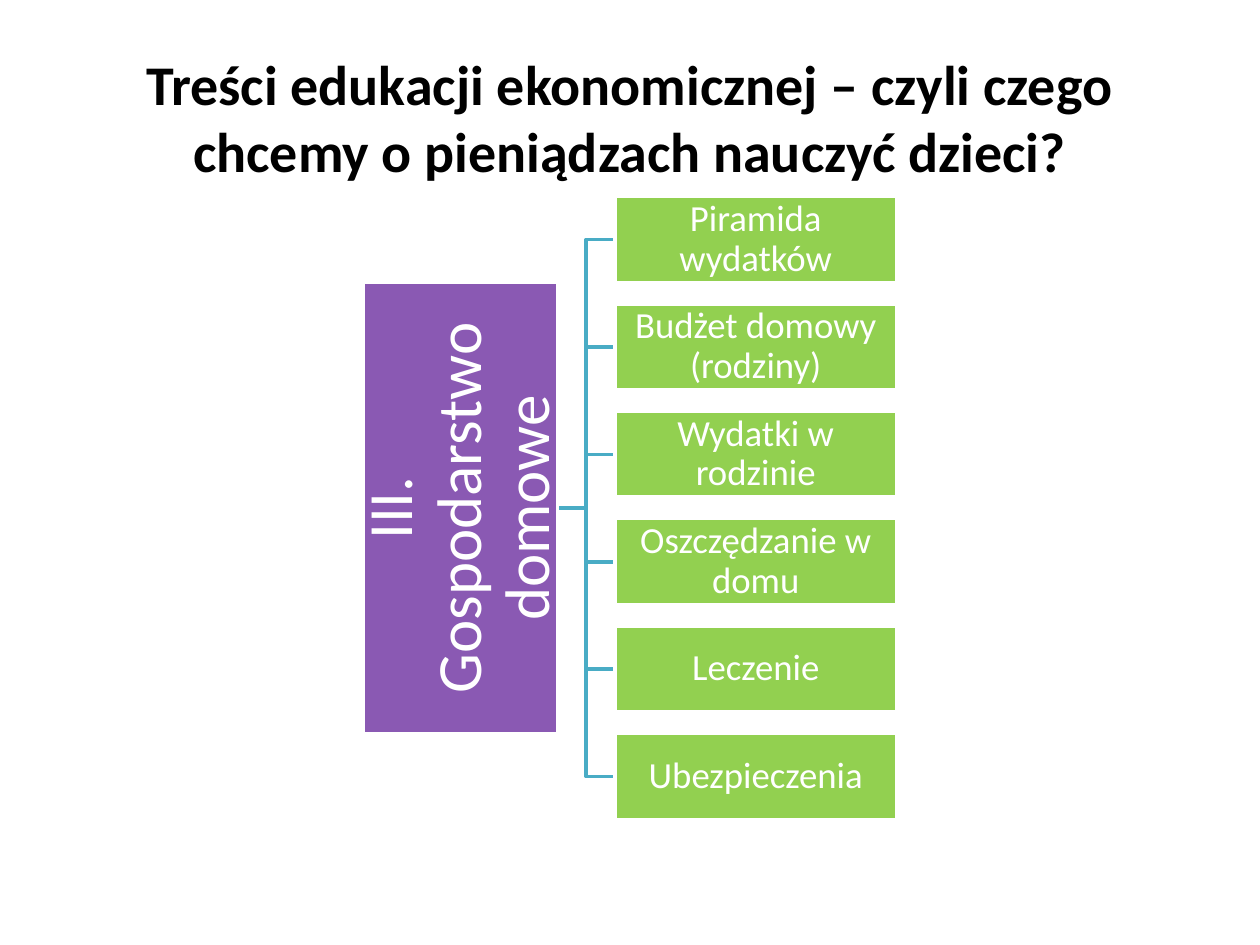
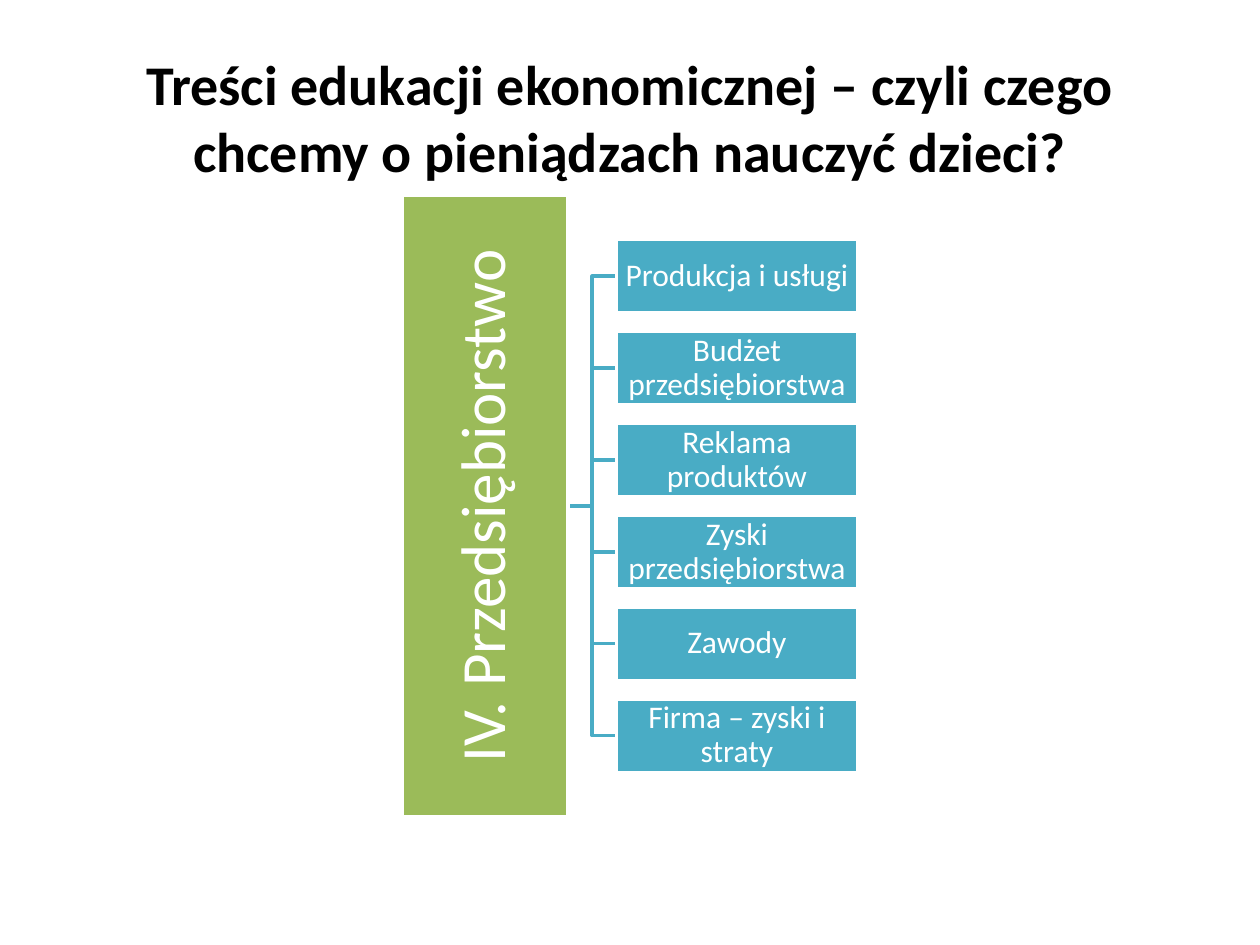
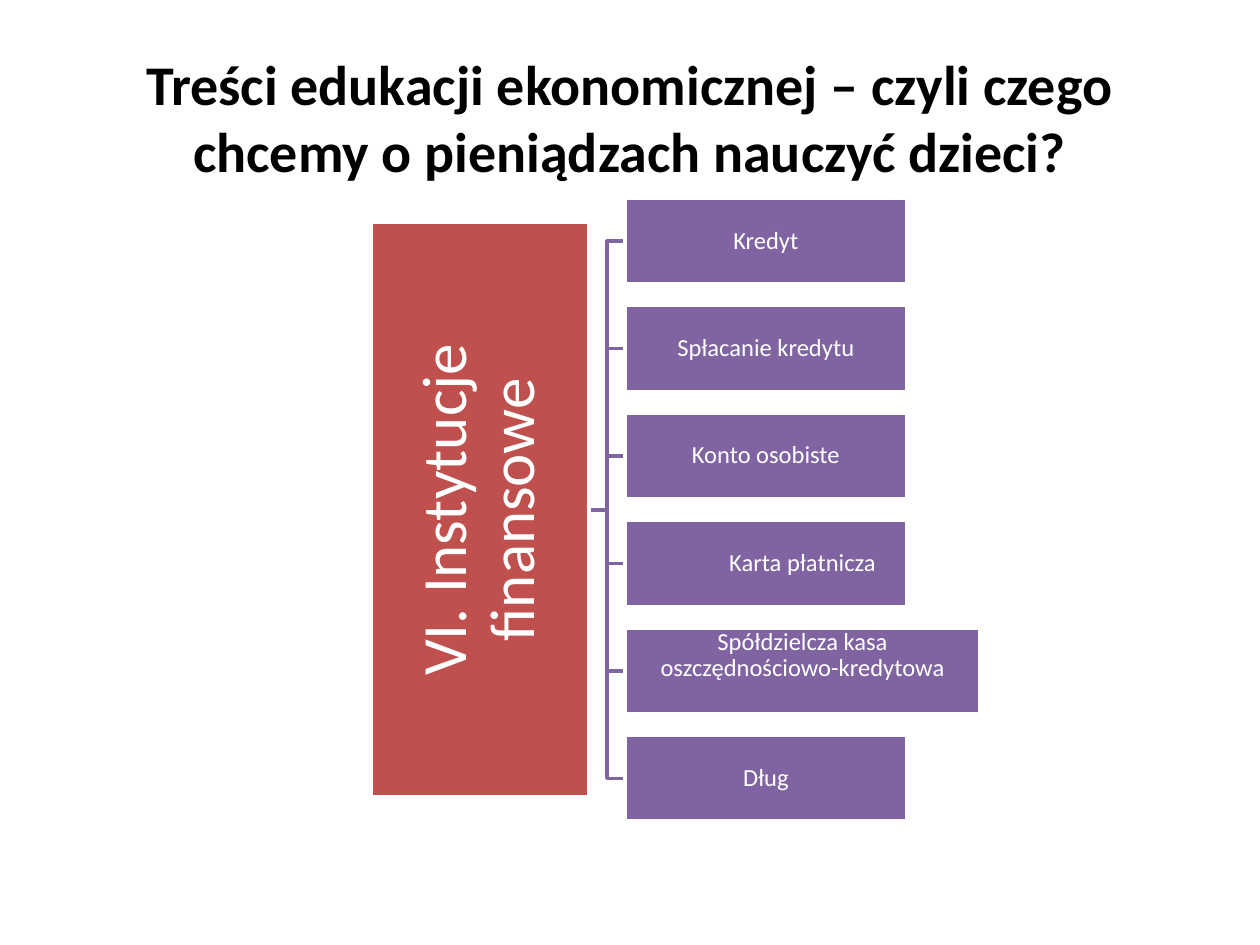
import dataclasses
import pptx
import pptx.dml.color
import pptx.enum.shapes
import pptx.enum.text
import pptx.util

Pt = pptx.util.Pt
RGB = pptx.dml.color.RGBColor.from_string
PP_ALIGN = pptx.enum.text.PP_ALIGN
ANCHOR = pptx.enum.text.MSO_ANCHOR


@dataclasses.dataclass(frozen=True)
class Theme:
    font: str = "Calibri"
    black: str = "000000"
    white: str = "FFFFFF"
    purple: str = "8A59B3"
    lime: str = "92D050"
    olive: str = "9BBB59"
    teal: str = "49ACC5"
    red: str = "BF504D"
    violet: str = "8064A2"
    title_size: int = 32
    root_size: int = 36
    large: int = 21
    medium: int = 18
    small: int = 14
    line: int = 2


@dataclasses.dataclass(frozen=True)
class Item:
    text: str
    box_w: float = None
    text_w: float = None
    text_h: float = None


@dataclasses.dataclass(frozen=True)
class Topic:
    root: Item
    root_color: str
    root_x: float
    root_w: float
    root_h: float
    items: tuple
    item_color: str
    line_color: str
    item_size: int
    item_x: float
    item_w: float
    item_h: float
    mid_y: float


THEME = Theme()
TITLE = "Treści edukacji ekonomicznej – czyli czego chcemy o pieniądzach nauczyć dzieci?"
WIDE = 203
TOPICS = (
    Topic(
        Item("III. Gospodarstwo domowe"), THEME.purple, 207.8, 110.8, 258.5,
        (Item("Piramida wydatków"), Item("Budżet domowy (rodziny)"),
         Item("Wydatki w rodzinie"), Item("Oszczędzanie w domu"),
         Item("Leczenie"), Item("Ubezpieczenia")),
        THEME.lime, THEME.teal, THEME.large, 351.3, 161.1, 49.1, 290.3),
    Topic(
        Item("IV. Przedsiębiorstwo"), THEME.olive, 229.7, 95, 355.5,
        (Item("Produkcja i usługi"), Item("Budżet przedsiębiorstwa"),
         Item("Reklama produktów"), Item("Zyski przedsiębiorstwa"),
         Item("Zawody"), Item("Firma – zyski i straty")),
        THEME.teal, THEME.teal, THEME.medium, 352.2, 137.8, 42, 289.1),
    Topic(
        Item("VI. Instytucje finansowe"), THEME.red, 212, 124.5, 328.3,
        (Item("Kredyt"), Item("Spłacanie kredytu"), Item("Konto osobiste"),
         Item("Karta płatnicza", text_w=WIDE),
         Item("Spółdzielcza kasa oszczędnościowo-kredytowa",
              box_w=WIDE, text_w=WIDE, text_h=31.7),
         Item("Dług")),
        THEME.violet, THEME.violet, THEME.small, 357.1, 161.1, 49.1, 291.3),
)


class Deck:
    def __init__(self, theme):
        self.theme = theme
        self.prs = pptx.Presentation()
        self.prs.slide_width, self.prs.slide_height = Pt(720), Pt(540)
        self.s = None

    def add_slide(self):
        self.s = self.prs.slides.add_slide(self.prs.slide_layouts[6])

    def set_text(self, sp, text, size, color, inset_x, inset_y, bold=False, spacing=1.0):
        tf = sp.text_frame
        frame = dict(word_wrap=True, vertical_anchor=ANCHOR.MIDDLE,
                     margin_left=Pt(inset_x), margin_right=Pt(inset_x),
                     margin_top=Pt(inset_y), margin_bottom=Pt(inset_y))
        p = tf.paragraphs[0]
        r = p.add_run()
        r.text = text
        para = dict(alignment=PP_ALIGN.CENTER, line_spacing=spacing)
        font = dict(name=self.theme.font, size=Pt(size), bold=bold)
        for target, values in ((tf, frame), (p, para), (r.font, font)):
            for name, value in values.items():
                setattr(target, name, value)
        r.font.color.rgb = RGB(color)

    def label(self, sp, text, size):
        inset = size * 0.05
        self.set_text(sp, text, size, self.theme.white, inset, inset, spacing=0.9)

    def textbox(self, x, y, w, h):
        return self.s.shapes.add_textbox(Pt(x), Pt(y), Pt(w), Pt(h))

    def title(self, text):
        sp = self.textbox(36, 21.6, 648, 90)
        self.set_text(sp, text, self.theme.title_size, self.theme.black, 7.2, 3.6, bold=True)

    def outline(self, sp, color):
        sp.shadow.inherit = False
        sp.line.color.rgb = RGB(color)
        sp.line.width = Pt(self.theme.line)

    def box(self, x, y, w, h, color):
        sp = self.s.shapes.add_shape(
            pptx.enum.shapes.MSO_SHAPE.RECTANGLE, Pt(x), Pt(y), Pt(w), Pt(h))
        sp.fill.solid()
        sp.fill.fore_color.rgb = RGB(color)
        self.outline(sp, self.theme.white)
        return sp

    def elbow(self, x1, y1, x2, y2, color):
        mid = (x1 + x2) / 2
        fb = self.s.shapes.build_freeform(Pt(x1), Pt(y1))
        fb.add_line_segments(
            [(Pt(x), Pt(y)) for x, y in ((mid, y1), (mid, y2), (x2, y2))], close=False)
        sp = fb.convert_to_shape()
        sp.fill.background()
        self.outline(sp, color)

    def root(self, t):
        cx = t.root_x + t.root_w / 2
        sp = self.box(cx - t.root_h / 2, t.mid_y - t.root_w / 2,
                      t.root_h, t.root_w, t.root_color)
        sp.rotation = 270
        self.label(sp, t.root.text, self.theme.root_size)

    def item(self, t, item, y):
        sp = self.box(t.item_x, y, item.box_w or t.item_w, t.item_h, t.item_color)
        if item.text_w:
            sp = self.textbox(t.item_x, y, item.text_w, item.text_h or t.item_h)
        self.label(sp, item.text, t.item_size)

    def tree(self, t):
        pitch = t.item_h * 1.25
        first = t.mid_y - pitch * (len(t.items) - 1) / 2
        centers = [first + i * pitch for i in range(len(t.items))]
        for y in reversed(centers):
            self.elbow(t.root_x + t.root_w, t.mid_y, t.item_x, y, t.line_color)
        self.root(t)
        for item, y in zip(t.items, centers):
            self.item(t, item, y - t.item_h / 2)


def main():
    deck = Deck(THEME)
    for topic in TOPICS:
        deck.add_slide()
        deck.title(TITLE)
        deck.tree(topic)
    deck.prs.save("out.pptx")


if __name__ == "__main__":
    main()
